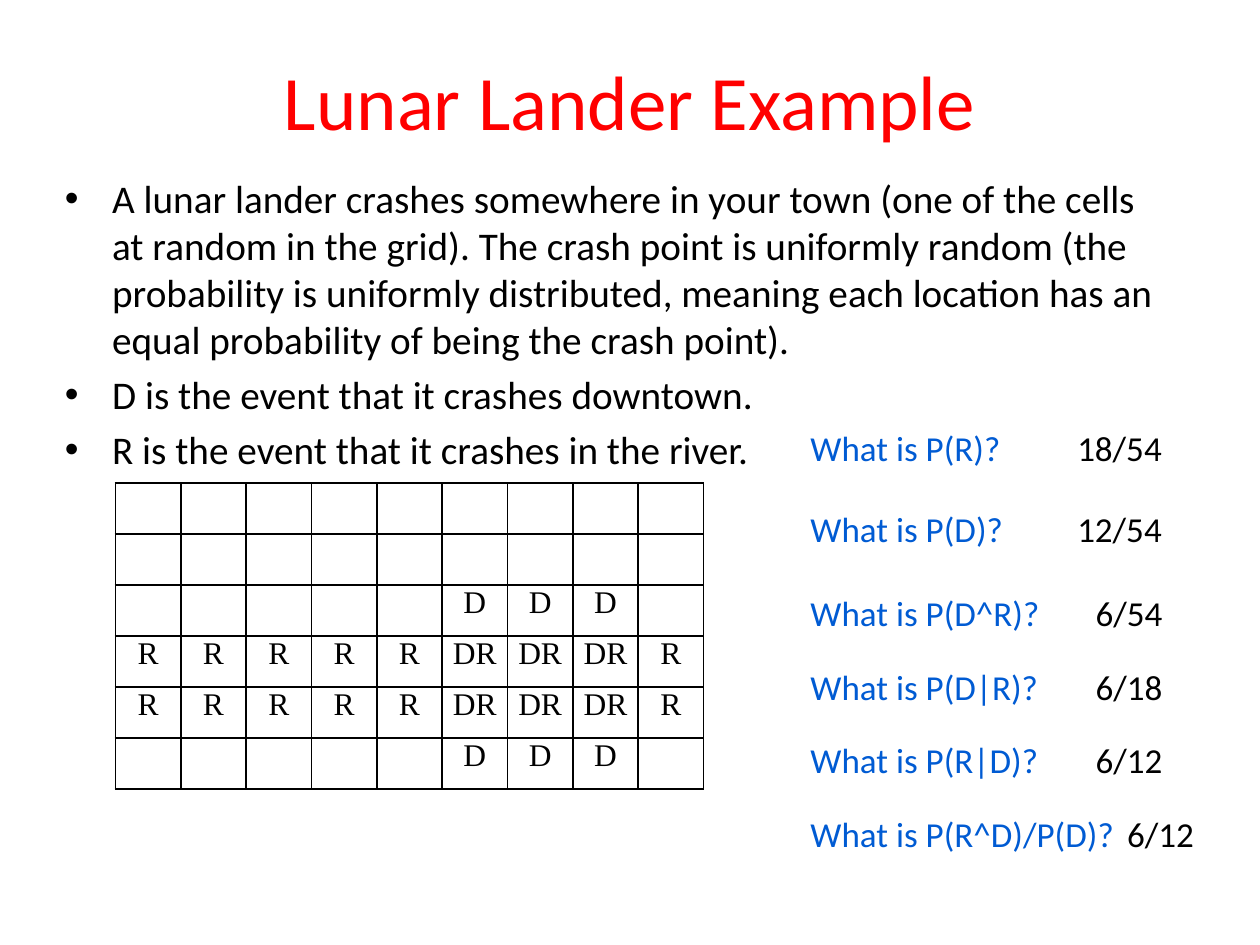
from dataclasses import dataclass

from lxml import etree
from pptx import Presentation
from pptx.dml.color import RGBColor
from pptx.enum.text import MSO_ANCHOR, MSO_AUTO_SIZE, PP_ALIGN
from pptx.oxml.ns import qn
from pptx.util import Pt

LEFT, CENTER = PP_ALIGN.LEFT, PP_ALIGN.CENTER
MIDDLE = MSO_ANCHOR.MIDDLE
GROW, FIXED = MSO_AUTO_SIZE.SHAPE_TO_FIT_TEXT, MSO_AUTO_SIZE.NONE
TITLE_ONLY = 5


@dataclass(frozen=True)
class Theme:
    sans: str = "Calibri"
    serif: str = "Times New Roman"
    red: str = "FF0000"
    blue: str = "005BD3"
    black: str = "000000"
    title_size: float = 44
    body_size: float = 22.4
    quiz_size: float = 20
    cell_size: float = 18


@dataclass(frozen=True)
class Question:
    text: str
    answer: str
    top: float
    width: float
    answer_left: float
    answer_width: float


THEME = Theme()

STATEMENTS = [
    "A lunar lander crashes somewhere in your town (one of the cells at random "
    "in the grid). The crash point is uniformly random (the probability is "
    "uniformly distributed, meaning each location has an equal probability of "
    "being the crash point).",
    "D is the event that it crashes downtown.",
    "R is the event that it crashes in the river.",
]

QUESTIONS = [
    Question("What is P(R)?", "18/54", 240, 124.5, 608.5, 63.5),
    Question("What is P(D)?", "12/54", 286.5, 126, 608.5, 63.5),
    Question("What is P(D^R)?", "6/54", 334.5, 147, 619, 53),
    Question("What is P(D|R)?", "6/18", 376.5, 147, 619, 53),
    Question("What is P(R|D)?", "6/12", 418.5, 146, 619, 53),
    Question("What is P(R^D)/P(D)?", "6/12", 460.5, 190, 637, 53),
]

# Town grid: zero-based rows and columns of each area
ROWS, COLUMNS = 6, 9
DOWNTOWN_ROWS, DOWNTOWN_COLUMNS = range(2, 6), range(5, 8)
RIVER_ROWS = range(3, 5)


def write(paragraph, text: str, *, size: float, color: str,
          font: str = THEME.sans, align=LEFT, before: float = 0) -> None:
    paragraph.alignment = align
    paragraph.space_before = Pt(before)
    run = paragraph.add_run()
    run.text = text
    run.font.name = font
    run.font.size = Pt(size)
    run.font.color.rgb = RGBColor.from_string(color)


def add_bullet(paragraph, indent: float) -> None:
    properties = paragraph._p.get_or_add_pPr()
    properties.set("marL", str(Pt(indent)))
    properties.set("indent", str(-Pt(indent)))
    etree.SubElement(properties, qn("a:buFont")).set("typeface", "Arial")
    etree.SubElement(properties, qn("a:buChar")).set("char", "•")


def add_label(slide, text: str, left: float, top: float, width: float,
              color: str) -> None:
    label = slide.shapes.add_textbox(Pt(left), Pt(top), Pt(width), Pt(31.5))
    label.text_frame.word_wrap = False
    label.text_frame.auto_size = GROW
    write(label.text_frame.paragraphs[0], text, size=THEME.quiz_size, color=color)


def add_borders(cell, color: str, width: float) -> None:
    properties = cell._tc.get_or_add_tcPr()
    for position, side in enumerate(("lnL", "lnR", "lnT", "lnB")):
        line = etree.Element(qn(f"a:{side}"), w=str(Pt(width)))
        fill = etree.SubElement(line, qn("a:solidFill"))
        etree.SubElement(fill, qn("a:srgbClr")).set("val", color)
        properties.insert(position, line)


def cell_events(row: int, column: int) -> str:
    downtown = row in DOWNTOWN_ROWS and column in DOWNTOWN_COLUMNS
    return "D" * downtown + "R" * (row in RIVER_ROWS)


def add_town_grid(slide) -> None:
    town = slide.shapes.add_table(ROWS, COLUMNS, Pt(66), Pt(276),
                                  Pt(336), Pt(175)).table
    town.first_row = town.horz_banding = False
    for row in range(ROWS):
        for column in range(COLUMNS):
            cell = town.cell(row, column)
            cell.margin_left = cell.margin_right = 0
            cell.margin_top = cell.margin_bottom = 0
            cell.fill.background()
            add_borders(cell, THEME.black, 1)
            events = cell_events(row, column)
            if events:
                write(cell.text_frame.paragraphs[0], events, font=THEME.serif,
                      size=THEME.cell_size, color=THEME.black, align=CENTER)


def add_title(slide, text: str) -> None:
    title = slide.shapes.title
    title.left, title.top, title.width, title.height = Pt(36), Pt(12), Pt(648), Pt(90)
    title.text_frame.vertical_anchor = MIDDLE
    title.text_frame.auto_size = FIXED
    write(title.text_frame.paragraphs[0], text, size=THEME.title_size,
          color=THEME.red, align=CENTER)


def add_statements(slide) -> None:
    body = slide.shapes.add_textbox(Pt(30), Pt(96), Pt(648), Pt(150)).text_frame
    body.word_wrap = True
    for index, statement in enumerate(STATEMENTS):
        paragraph = body.add_paragraph() if index else body.paragraphs[0]
        add_bullet(paragraph, 27)
        write(paragraph, statement, size=THEME.body_size, color=THEME.black,
              before=4.5 if index else 0)


def main() -> None:
    deck = Presentation()
    deck.slide_width, deck.slide_height = Pt(720), Pt(540)
    slide = deck.slides.add_slide(deck.slide_layouts[TITLE_ONLY])

    # Title and setting
    add_title(slide, "Lunar Lander Example")
    add_statements(slide)

    # Map of the town
    add_town_grid(slide)

    # Questions with their answers
    for question in QUESTIONS:
        add_label(slide, question.text, 456, question.top, question.width, THEME.blue)
        add_label(slide, question.answer, question.answer_left, question.top,
                  question.answer_width, THEME.black)

    deck.save("out.pptx")


if __name__ == "__main__":
    main()
